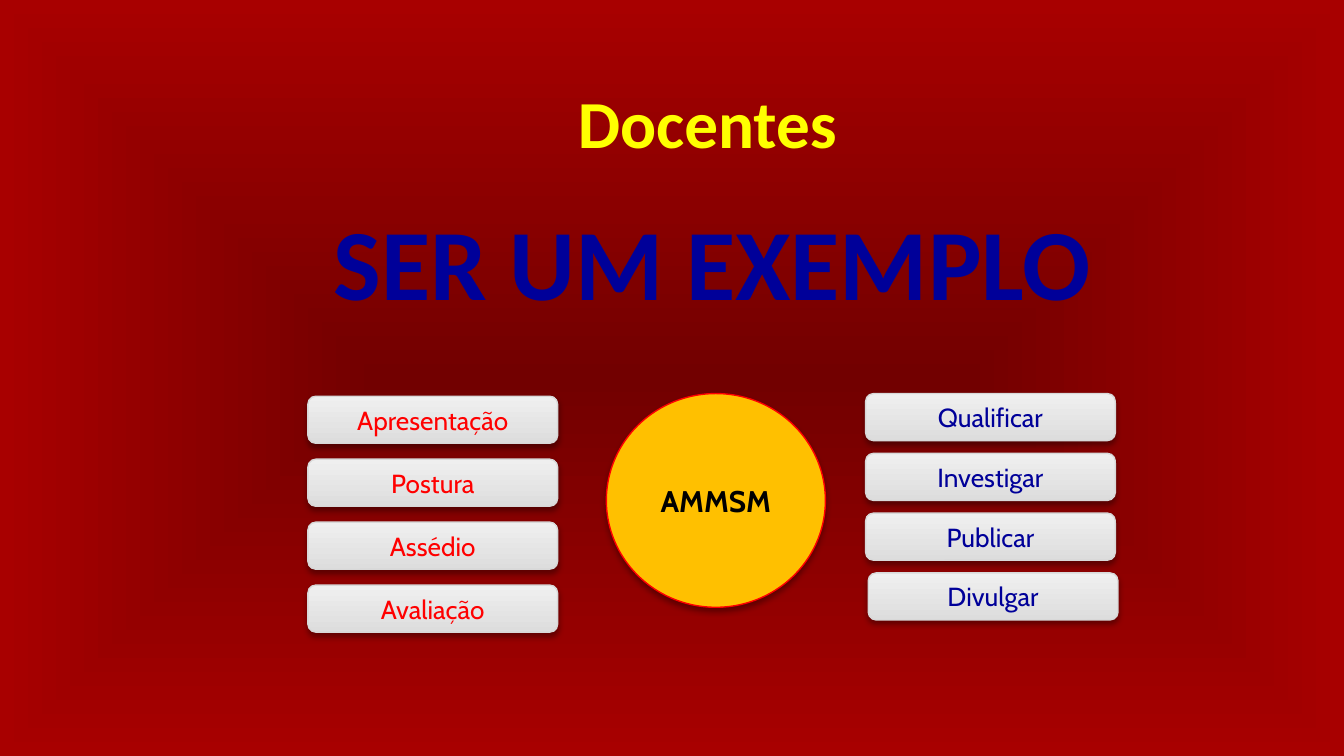
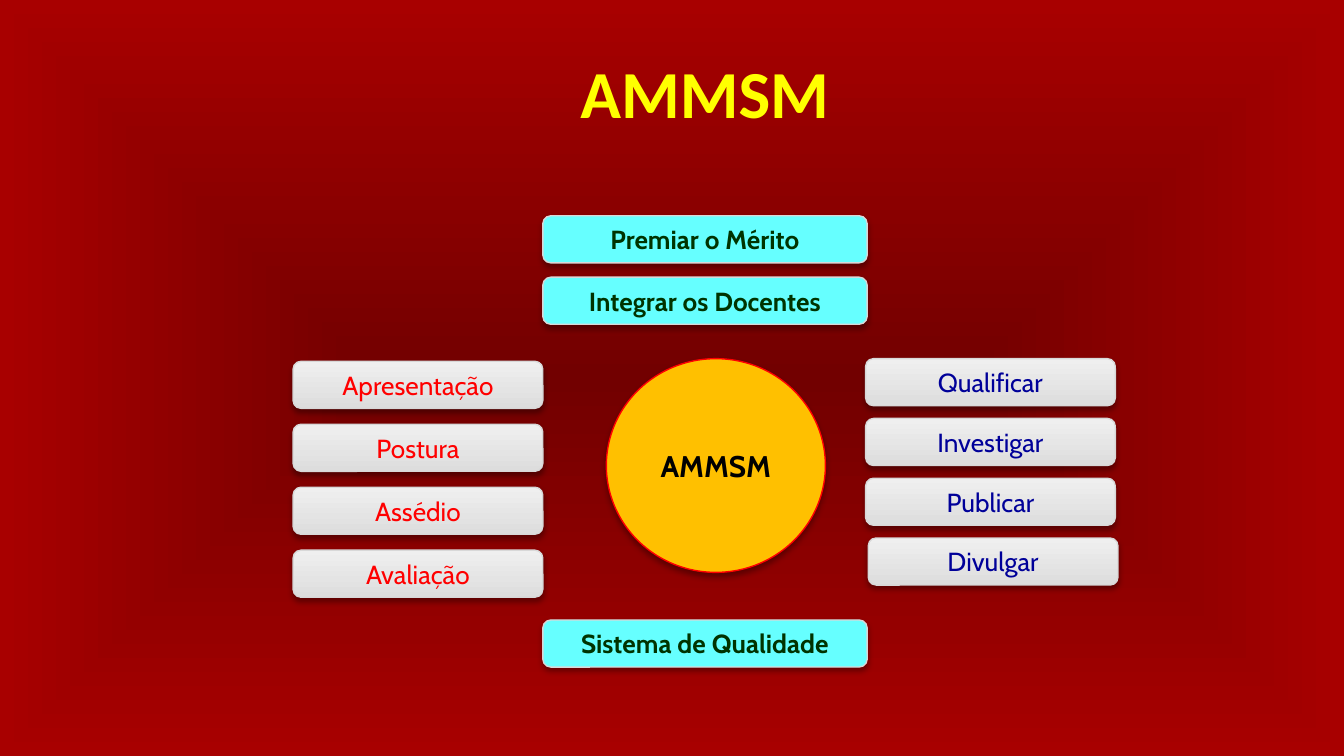
from pptx import Presentation
from pptx.dml.color import RGBColor
from pptx.enum.shapes import MSO_SHAPE
from pptx.enum.text import MSO_ANCHOR, MSO_AUTO_SIZE, PP_ALIGN
from pptx.oxml import parse_xml
from pptx.oxml.ns import nsdecls
from pptx.util import Cm, Pt

RED = RGBColor(0xFF, 0x00, 0x00)
BLUE = RGBColor(0x00, 0x00, 0x99)
GOLD = RGBColor(0xFF, 0xC0, 0x00)
YELLOW = RGBColor(0xFF, 0xFF, 0x00)
BLACK = RGBColor(0x00, 0x00, 0x00)
CYAN = RGBColor(0x66, 0xFF, 0xFF)
GREEN = RGBColor(0x00, 0x33, 0x00)
EDGE = RGBColor(0xD8, 0xD8, 0xD8)
DARK = RGBColor(0xDD, 0xDD, 0xDD)
LIGHT = RGBColor(0xEF, 0xEF, 0xEF)

BACK = f"""<p:bg {nsdecls("p", "a")}><p:bgPr><a:gradFill rotWithShape="1"><a:gsLst>
<a:gs pos="0"><a:srgbClr val="720000"/></a:gs>
<a:gs pos="100000"><a:srgbClr val="A80000"><a:alpha val="88000"/></a:srgbClr></a:gs>
</a:gsLst><a:path path="rect"><a:fillToRect l="50000" t="50000" r="50000" b="50000"/></a:path>
</a:gradFill><a:effectLst/></p:bgPr></p:bg>""".replace('path="rect"', 'path="shape"')
SHADE = f"""<a:effectLst {nsdecls("a")}>
<a:outerShdw blurRad="40000" dist="23000" dir="5400000" rotWithShape="0">
<a:srgbClr val="000000"><a:alpha val="35000"/></a:srgbClr></a:outerShdw></a:effectLst>"""
STROKE = f"""<a:ln {nsdecls("a")} w="13462"><a:solidFill>
<a:srgbClr val="FFFFFF"/></a:solidFill></a:ln>"""

SIDES = [
    (["Apresentação", "Postura", "Assédio", "Avaliação"], RED, 0.05, 1.19),
    (["Qualificar", "Investigar", "Publicar", "Divulgar"], BLUE, 0, 1.13),
]


def add_shape(shapes, kind, text, box, fill, edge, color, size=14, bold=True):
    shape = shapes.add_shape(kind, *map(Cm, box))
    if fill:
        shape.fill.solid()
        shape.fill.fore_color.rgb = fill
    else:
        shape.fill.gradient()
        shape.fill.gradient_angle = 90
        for stop, tone in zip(shape.fill.gradient_stops, (DARK, LIGHT)):
            stop.color.rgb = tone
    shape.line.color.rgb = edge
    shape.line.width = Pt(0.75)
    shape._element.spPr.append(parse_xml(SHADE))
    frame = shape.text_frame
    frame.vertical_anchor = MSO_ANCHOR.MIDDLE
    write(frame, text, "Cabin", size, color, bold, PP_ALIGN.CENTER)


def write(frame, text, face, size, color, bold, align):
    line = frame.paragraphs[0]
    line.text = text
    line.alignment = align
    font = line.font
    font.name = face
    font.size = Pt(size)
    font.bold = bold
    font.color.rgb = color


deck = Presentation()
deck.slide_width = Cm(25.4)
deck.slide_height = Cm(14.29)
pages = [deck.slides.add_slide(deck.slide_layouts[6]) for _ in range(2)]
first, second = pages
group = second.shapes.add_group_shape()

for page, shapes, top, left in [
    (first, first.shapes, 7.44, 5.82),
    (second, group.shapes, 6.78, 5.54),
]:
    page._element.cSld.insert(0, parse_xml(BACK))
    add_shape(shapes, MSO_SHAPE.OVAL, "AMMSM", (11.46, top, 4.14, 4.04),
              GOLD, RED, BLACK, 16)
    for (words, color, drop, pitch), x in zip(SIDES, (left, 16.36)):
        for row, word in enumerate(words):
            nudge = 0.05 if word == "Divulgar" else 0
            box = (x + nudge, top + drop + row * pitch, 4.72, 0.89)
            add_shape(shapes, MSO_SHAPE.ROUNDED_RECTANGLE, word, box,
                      None, EDGE, color, bold=False)

for word, y in [
    ("Premiar o Mérito", 4.08),
    ("Integrar os Docentes", 5.24),
    ("Sistema de Qualidade", 11.72),
]:
    add_shape(second.shapes, MSO_SHAPE.ROUNDED_RECTANGLE, word,
              (10.26, y, 6.13, 0.89), CYAN, EDGE, GREEN)

for page, text, box, size, color, align in [
    (first, "Docentes", (10.67, 1.42, 5.46, 1.8), 36, YELLOW, PP_ALIGN.LEFT),
    (first, "SER UM EXEMPLO", (5.97, 3.66, 14.99, 2.57), 54, BLUE, PP_ALIGN.CENTER),
    (second, "AMMSM", (10.72, 0.84, 5.26, 1.8), 36, YELLOW, PP_ALIGN.LEFT),
]:
    frame = page.shapes.add_textbox(*map(Cm, box)).text_frame
    frame.word_wrap = False
    frame.auto_size = MSO_AUTO_SIZE.SHAPE_TO_FIT_TEXT
    write(frame, text, "Calibri", size, color, True, align)
    if color == BLUE:
        run = frame.paragraphs[0].runs[0]
        run._r.get_or_add_rPr().insert(0, parse_xml(STROKE))

deck.save("out.pptx")
